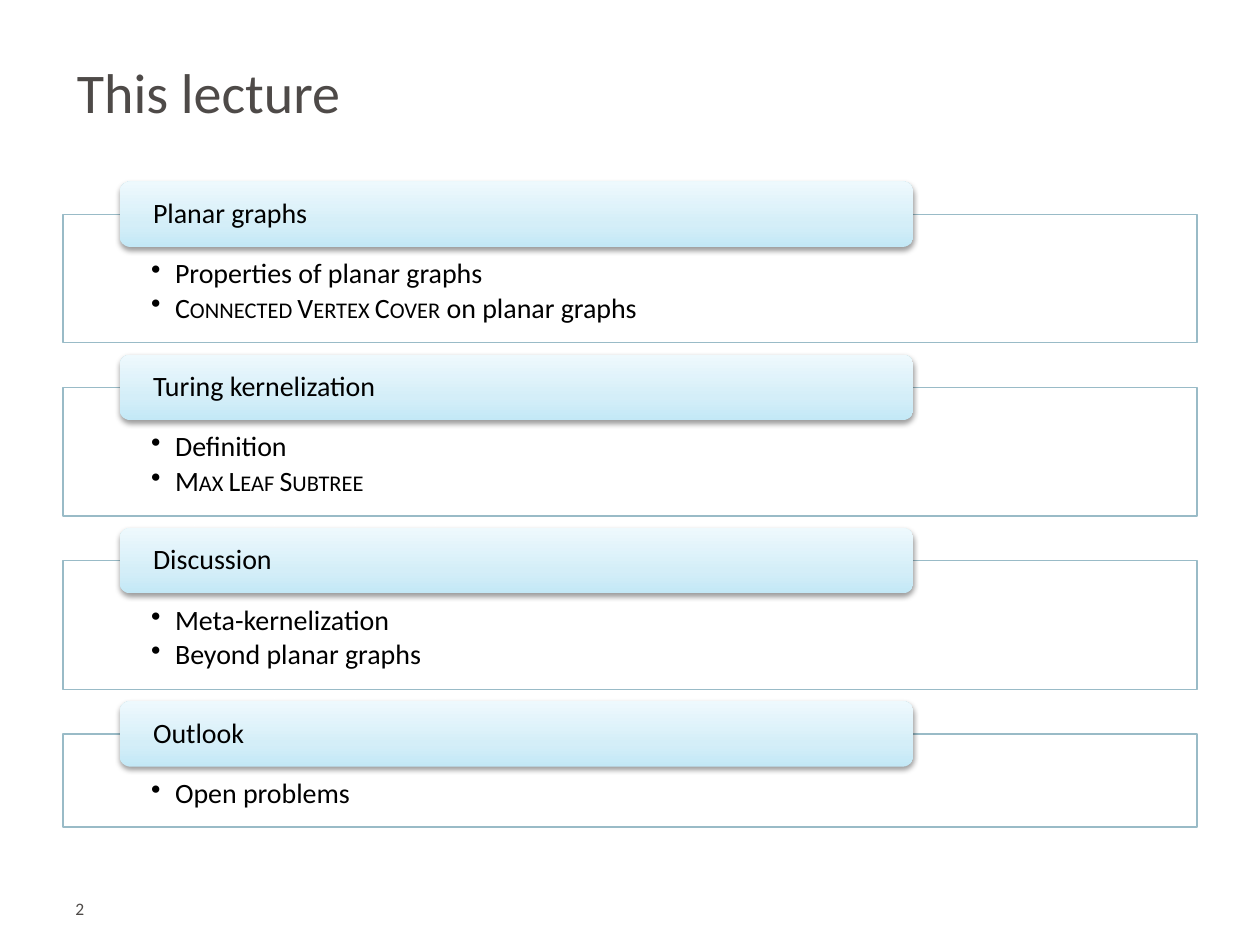
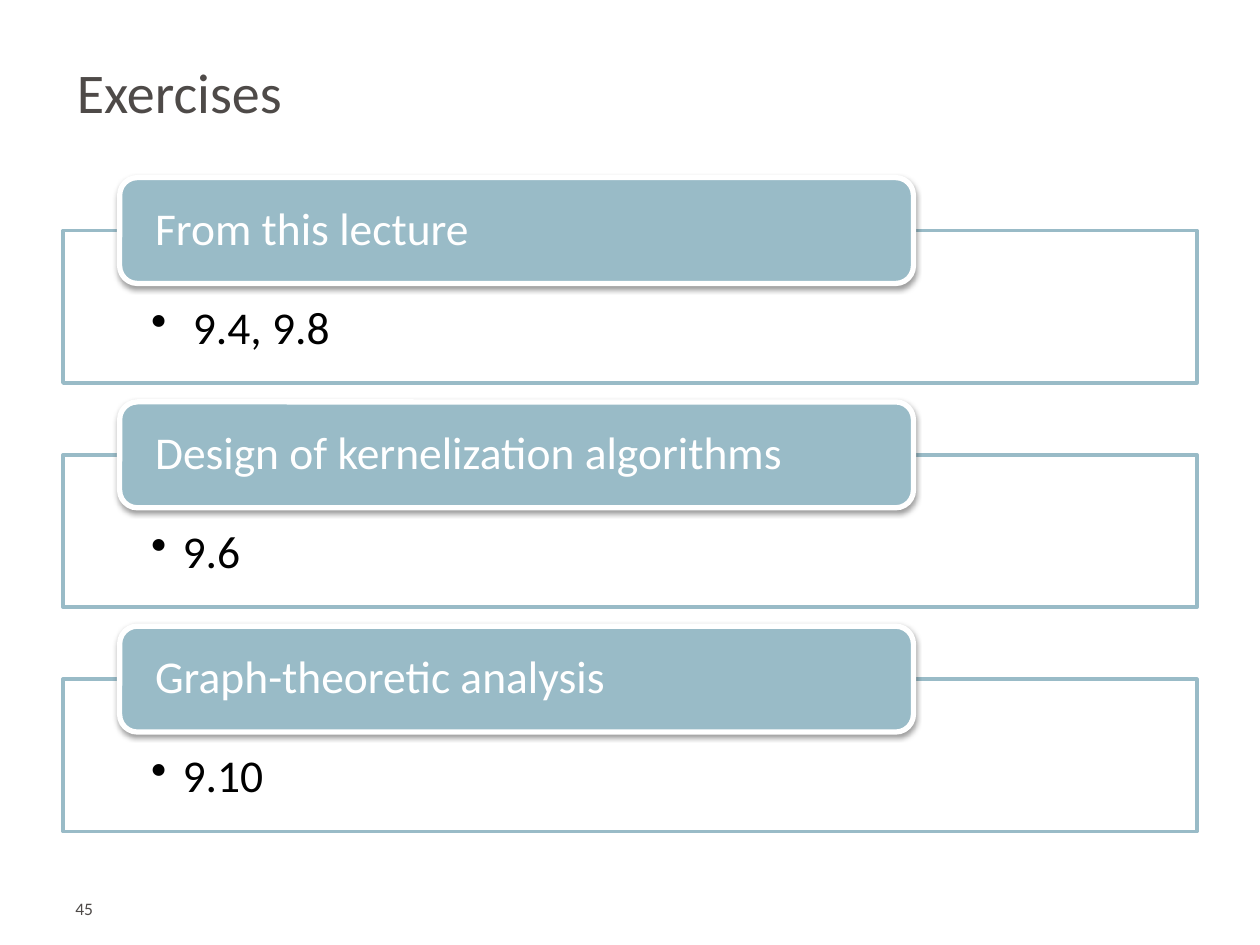
from lxml.etree import SubElement
from pptx import Presentation
from pptx.dml.color import RGBColor
from pptx.enum.shapes import MSO_SHAPE
from pptx.enum.text import MSO_ANCHOR, PP_ALIGN
from pptx.oxml.ns import qn
from pptx.util import Emu, Inches, Pt

FONT = "Calibri"
COLORS = {
    "title": "4E4A48",
    "accent": "99BBC7",
    "white": "FFFFFF",
    "black": "000000",
}
HEADER_GRADIENT = [(0, "C3E8F6"), (35, "D4EEF8"), (100, "EEF9FD")]

# Each item is a list of (text, small caps) runs.
SLIDES = [
    {
        "title": "This lecture",
        "number": "2",
        "sections": [
            ("Planar graphs", [
                [("Properties of planar graphs", False)],
                [("Connected Vertex Cover", True), (" on planar graphs", False)],
            ]),
            ("Turing kernelization", [
                [("Definition", False)],
                [("Max Leaf Subtree", True)],
            ]),
            ("Discussion", [
                [("Meta-kernelization", False)],
                [("Beyond planar graphs", False)],
            ]),
            ("Outlook", [[("Open problems", False)]]),
        ],
        "style": {
            "top": 1.7, "gap": 0.355, "base_height": 0.46, "item_height": 0.28,
            "header_height": 0.52, "header_rise": 0.26, "size": 16,
            "indent": 0.19, "insets": (0.7, 0.36, 0.7, 0.12),
            "box_line": 0.75, "header_line": None, "header_text": "black",
        },
    },
    {
        "title": "Exercises",
        "number": "45",
        "sections": [
            ("From this lecture", [[(" 9.4, 9.8", False)]]),
            ("Design of kernelization algorithms", [[("9.6", False)]]),
            ("Graph-theoretic analysis", [[("9.10", False)]]),
        ],
        "style": {
            "top": 1.83, "gap": 0.57, "base_height": 0.75, "item_height": 0.46,
            "header_height": 0.84, "header_rise": 0.42, "size": 26,
            "indent": 0.25, "insets": (0.7, 0.59, 0.7, 0.2),
            "box_line": 2, "header_line": 3, "header_text": "white",
        },
    },
]


def rgb(name):
    return RGBColor.from_string(COLORS[name])


def add_bullet(paragraph, indent):
    paragraph.level = 1
    properties = paragraph._p.get_or_add_pPr()
    properties.set("marL", str(Inches(indent)))
    properties.set("indent", str(-Inches(indent)))
    SubElement(properties, qn("a:buChar"), char="•")


def write_text(shape, paragraphs, size, color, anchor=MSO_ANCHOR.TOP, insets=None,
               indent=None, line_spacing=None, space_after=None):
    """Fill a shape with paragraphs, each a list of (text, small caps) runs."""
    frame = shape.text_frame
    frame.word_wrap = True
    frame.vertical_anchor = anchor
    if insets:
        (frame.margin_left, frame.margin_top,
         frame.margin_right, frame.margin_bottom) = map(Inches, insets)
    for index, runs in enumerate(paragraphs):
        paragraph = frame.add_paragraph() if index else frame.paragraphs[0]
        paragraph.alignment = PP_ALIGN.LEFT
        if indent:
            add_bullet(paragraph, indent)
        if line_spacing:
            paragraph.line_spacing = line_spacing
        if space_after:
            paragraph.space_after = Pt(space_after)
        for text, small_caps in runs:
            run = paragraph.add_run()
            run.text = text
            run.font.name = FONT
            run.font.size = Pt(size)
            run.font.color.rgb = rgb(color)
            if small_caps:
                run.font._element.set("cap", "small")


def set_line(shape, color, width):
    if width is None:
        shape.line.fill.background()
    else:
        shape.line.color.rgb = rgb(color)
        shape.line.width = Pt(width)


def fill_header_gradient(shape):
    shape.fill.gradient()
    shape.fill.gradient_angle = 90
    stops = shape._element.spPr.find(".//" + qn("a:gsLst"))
    for stop in list(stops):
        stops.remove(stop)
    for position, color in HEADER_GRADIENT:
        stop = SubElement(stops, qn("a:gs"), pos=str(position * 1000))
        SubElement(stop, qn("a:srgbClr"), val=color)


def add_shadow(shape):
    shape.shadow.inherit = False
    effects = shape._element.spPr.find(qn("a:effectLst"))
    shadow = SubElement(effects, qn("a:outerShdw"), blurRad="40000", dist="20000",
                        dir="5400000", rotWithShape="0")
    color = SubElement(shadow, qn("a:srgbClr"), val=COLORS["black"])
    SubElement(color, qn("a:alpha"), val="38000")


def add_box(slide, top, height, items, style):
    box = slide.shapes.add_shape(MSO_SHAPE.RECTANGLE, Inches(0.5), Inches(top),
                                 Inches(9), Inches(height))
    box.shadow.inherit = False
    box.fill.solid()
    box.fill.fore_color.rgb = rgb("white")
    fill_color = box._element.spPr.find(qn("a:solidFill"))[0]
    SubElement(fill_color, qn("a:alpha"), val="90000")
    set_line(box, "accent", style["box_line"])
    write_text(box, items, style["size"], "black", insets=style["insets"],
               indent=style["indent"], line_spacing=0.9,
               space_after=0.15 * style["size"])


def add_header(slide, top, text, style):
    header = slide.shapes.add_shape(MSO_SHAPE.ROUNDED_RECTANGLE, Inches(0.95), Inches(top),
                                    Inches(6.3), Inches(style["header_height"]))
    if style["header_line"] is None:
        fill_header_gradient(header)
    else:
        header.fill.solid()
        header.fill.fore_color.rgb = rgb("accent")
    set_line(header, "white", style["header_line"])
    add_shadow(header)
    write_text(header, [[(text, False)]], style["size"], style["header_text"],
               anchor=MSO_ANCHOR.MIDDLE, insets=(0.24, 0, 0.24, 0), line_spacing=0.9)


def add_sections(slide, sections, style):
    top = style["top"]
    for heading, items in sections:
        height = style["base_height"] + style["item_height"] * len(items)
        add_box(slide, top, height, items, style)
        add_header(slide, top - style["header_rise"], heading, style)
        top += height + style["gap"]


def add_title_and_number(slide, title_text, number):
    title = slide.shapes.title
    title.left, title.top = Inches(0.51), Inches(0.38)
    title.width, title.height = Inches(9), Inches(0.69)
    write_text(title, [[(title_text, False)]], 32, "title", anchor=MSO_ANCHOR.MIDDLE)
    number_box = slide.shapes.add_textbox(Inches(0.5), Inches(7.13),
                                          Inches(2.14), Inches(0.3))
    write_text(number_box, [[(number, False)]], 10, "title", insets=(0.1, 0, 0.1, 0.05))


def main():
    presentation = Presentation()
    presentation.slide_width = Inches(10)
    presentation.slide_height = Inches(7.5)
    title_only = presentation.slide_layouts[5]
    for content in SLIDES:
        slide = presentation.slides.add_slide(title_only)
        add_sections(slide, content["sections"], content["style"])
        add_title_and_number(slide, content["title"], content["number"])
    presentation.save("out.pptx")


if __name__ == "__main__":
    main()
